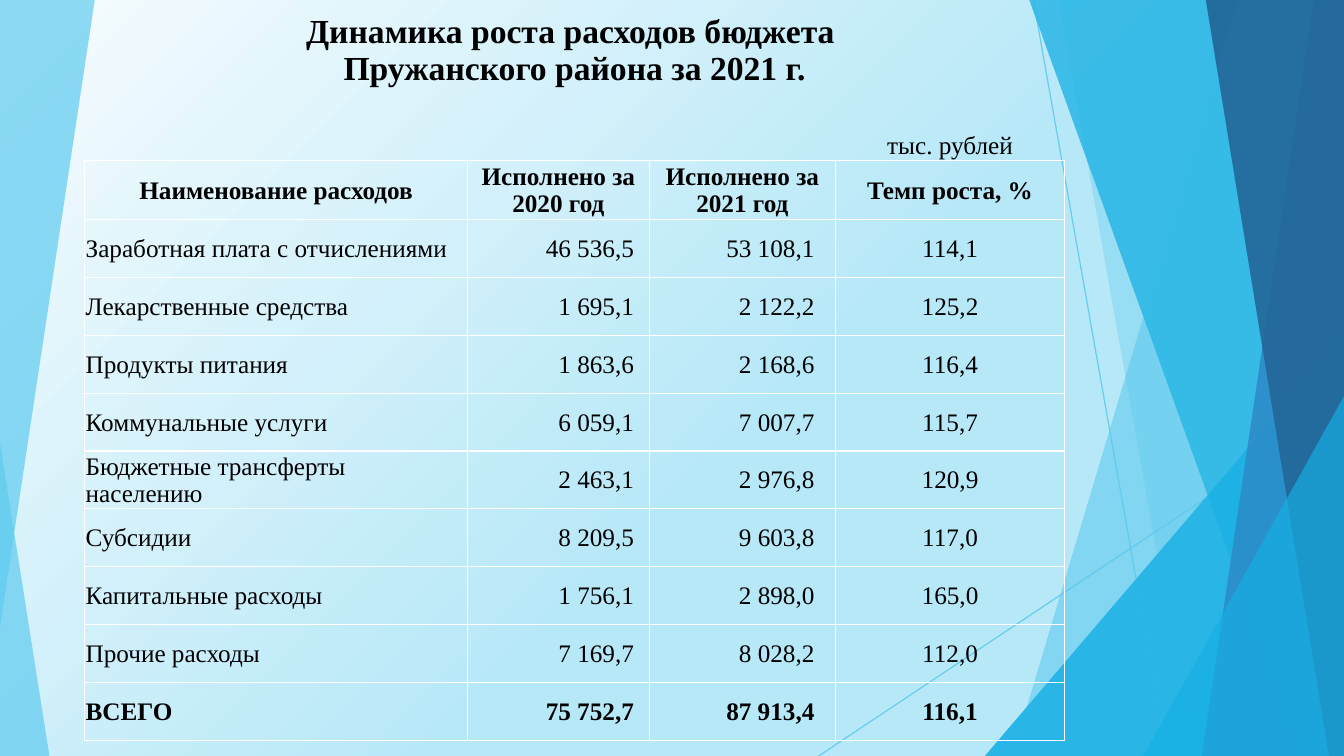
from lxml import etree
from pptx import Presentation
from pptx.dml.color import RGBColor
from pptx.enum.shapes import MSO_CONNECTOR as Line, MSO_SHAPE as Shape
from pptx.enum.text import MSO_ANCHOR as Anchor, PP_ALIGN as Align
from pptx.oxml.ns import qn
from pptx.util import Inches, Pt

WIDE, HIGH = Inches(13.33), Inches(7.5)
FONT = "Times New Roman"
SKY, AZURE, BLUE, NAVY = "5FCBEF", "17B0E4", "2E83C3", "226292"

# Shares of the slide, in percent
LEFT, TOP = 6.3, 1.2
COLS = [28.5, 13.5, 13.88, 17.03]
ROWS = [10.8, 5.2, 4, 7.87] + [7.65] * 9
PADS = [0.01, 0.15, 0.21, 0.01]  # right inset of each column, inches
ALIGNS = [Align.LEFT, Align.RIGHT, Align.RIGHT, Align.CENTER]

TITLE = ["Динамика роста расходов бюджета ", "Пружанского района за 2021 г."]
UNIT = "тыс. рублей"
HEADS = ["Наименование расходов", "Исполнено за 2020 год",
         "Исполнено за 2021 год", "Темп роста, %"]
COSTS = [
    ["Заработная плата с отчислениями", "46 536,5", "53 108,1", "114,1"],
    ["Лекарственные средства", "1 695,1", "2 122,2", "125,2"],
    ["Продукты питания", "1 863,6", "2 168,6", "116,4"],
    ["Коммунальные услуги", "6 059,1", "7 007,7", "115,7"],
    ["Бюджетные трансферты населению", "2 463,1", "2 976,8", "120,9"],
    ["Субсидии", "8 209,5", "9 603,8", "117,0"],
    ["Капитальные расходы", "1 756,1", "2 898,0", "165,0"],
    ["Прочие расходы", "7 169,7", "8 028,2", "112,0"],
    ["ВСЕГО", "75 752,7", "87 913,4", "116,1"],
]


def across(share):
    return round(WIDE * share / 100)


def down(share):
    return round(HIGH * share / 100)


def rgb(code):
    return RGBColor.from_string(code)


def fade(fill, code, alpha):
    """Set a solid colour with an opacity in percent."""
    fill.solid()
    fill.fore_color.rgb = rgb(code)
    tint = fill._xPr.find(".//" + qn("a:srgbClr"))
    etree.SubElement(tint, qn("a:alpha")).set("val", str(alpha * 1000))


def paint(shape, code, alpha):
    shape.shadow.inherit = False
    shape.line.fill.background()
    fade(shape.fill, code, alpha)


def ray(slide, x1, y1, x2, y2):
    line = slide.shapes.add_connector(
        Line.STRAIGHT, across(x1), down(y1), across(x2), down(y2))
    line.line.width = Pt(0.75)
    fade(line.line.fill, SKY, 70)
    etree.SubElement(line._element.spPr, qn("a:effectLst"))


def shard(slide, points, code, alpha):
    spots = [(across(x), down(y)) for x, y in points]
    path = slide.shapes.build_freeform(*spots[0])
    path.add_line_segments(spots[1:], close=True)
    paint(path.convert_to_shape(), code, alpha)


def band(slide, top, base, code, alpha):
    """Fill from a slanted edge to the right side of the slide."""
    shard(slide, [(top, 0), (100, 0), (100, 100), (base, 100)], code, alpha)


def wedge(slide, x, y, wide, peak, code, alpha):
    """Triangle standing on the bottom of the slide."""
    shape = slide.shapes.add_shape(
        Shape.ISOSCELES_TRIANGLE, across(x), down(y), across(wide), down(100 - y))
    shape.adjustments[0] = peak
    paint(shape, code, alpha)


def facets(slide):
    ray(slide, 76.89, 0, 86.87, 100)
    ray(slide, 100, 53.73, 60.92, 100)
    band(slide, 92.12, 75.32, SKY, 36)
    band(slide, 78.77, 88.75, SKY, 20)
    wedge(slide, 73.29, 44.4, 26.71, 1, AZURE, 66)
    band(slide, 76.59, 96.85, AZURE, 50)
    band(slide, 97.75, 89.42, BLUE, 70)
    band(slide, 89.72, 98.87, NAVY, 80)
    wedge(slide, 85.07, 52.4, 14.93, 1, AZURE, 66)


def backdrop(slide):
    fill = slide.background.fill
    fill.gradient()
    fill.gradient_angle = 315
    for stop, code, place in zip(fill.gradient_stops, ["F7FCFE", "B7E8F8"], [0, 0.57]):
        stop.color.rgb = rgb(code)
        stop.position = place


def edge(cell, sides):
    """Draw white lines on the given sides and none on the others."""
    props = cell._tc.get_or_add_tcPr()
    for spot, side in enumerate("LRTB"):
        line = etree.Element(qn("a:ln" + side), w=str(Pt(1)))
        if side in sides:
            solid = etree.SubElement(line, qn("a:solidFill"))
            etree.SubElement(solid, qn("a:srgbClr"), val="FFFFFF")
        else:
            etree.SubElement(line, qn("a:noFill"))
        props.insert(spot, line)


def write(cell, lines, align=Align.CENTER, size=18, bold=False, anchor=Anchor.MIDDLE):
    cell.vertical_anchor = anchor
    frame = cell.text_frame
    for spot, text in enumerate(lines):
        para = frame.add_paragraph() if spot else frame.paragraphs[0]
        para.alignment = align
        run = para.add_run()
        run.text = text
        run.font.name, run.font.size, run.font.bold = FONT, Pt(size), bold
        run.font.color.rgb = rgb("000000")


def ledger(slide):
    frame = slide.shapes.add_table(
        len(ROWS), len(COLS), across(LEFT), down(TOP),
        across(sum(COLS)), down(sum(ROWS)))
    table = frame.table
    table.first_row = table.horz_banding = False
    for col, share in zip(table.columns, COLS):
        col.width = across(share)
    for row, share in zip(table.rows, ROWS):
        row.height = down(share)
    for r, row in enumerate(table.rows):
        for cell in row.cells:
            cell.margin_left = cell.margin_right = cell.margin_top = Inches(0.01)
            cell.margin_bottom = 0
            cell.fill.background()
            edge(cell, "LRTB" if r > 2 else "B" if r == 2 else "")
            if r in (1, 2):
                cell.text_frame.paragraphs[0]._p.get_or_add_endParaRPr().set("sz", "1000")

    table.cell(0, 0).merge(table.cell(0, 3))
    write(table.cell(0, 0), TITLE, size=24, bold=True)
    write(table.cell(2, 3), [UNIT], anchor=Anchor.BOTTOM)
    for c, head in enumerate(HEADS):
        write(table.cell(3, c), [head], bold=True)
    for r, cost in enumerate(COSTS, 4):
        for c, text in enumerate(cost):
            cell = table.cell(r, c)
            cell.margin_right = Inches(PADS[c])
            write(cell, [text], ALIGNS[c], bold=cost is COSTS[-1])


def main():
    deck = Presentation()
    deck.slide_width, deck.slide_height = WIDE, HIGH
    slide = deck.slides.add_slide(deck.slide_layouts[6])
    backdrop(slide)
    facets(slide)
    wedge(slide, 0, 58.53, 3.68, 0, SKY, 70)
    shard(slide, [(0, 0), (7.05, 0), (0, 82.93)], SKY, 70)
    facets(slide)
    ledger(slide)
    deck.save("out.pptx")


if __name__ == "__main__":
    main()
